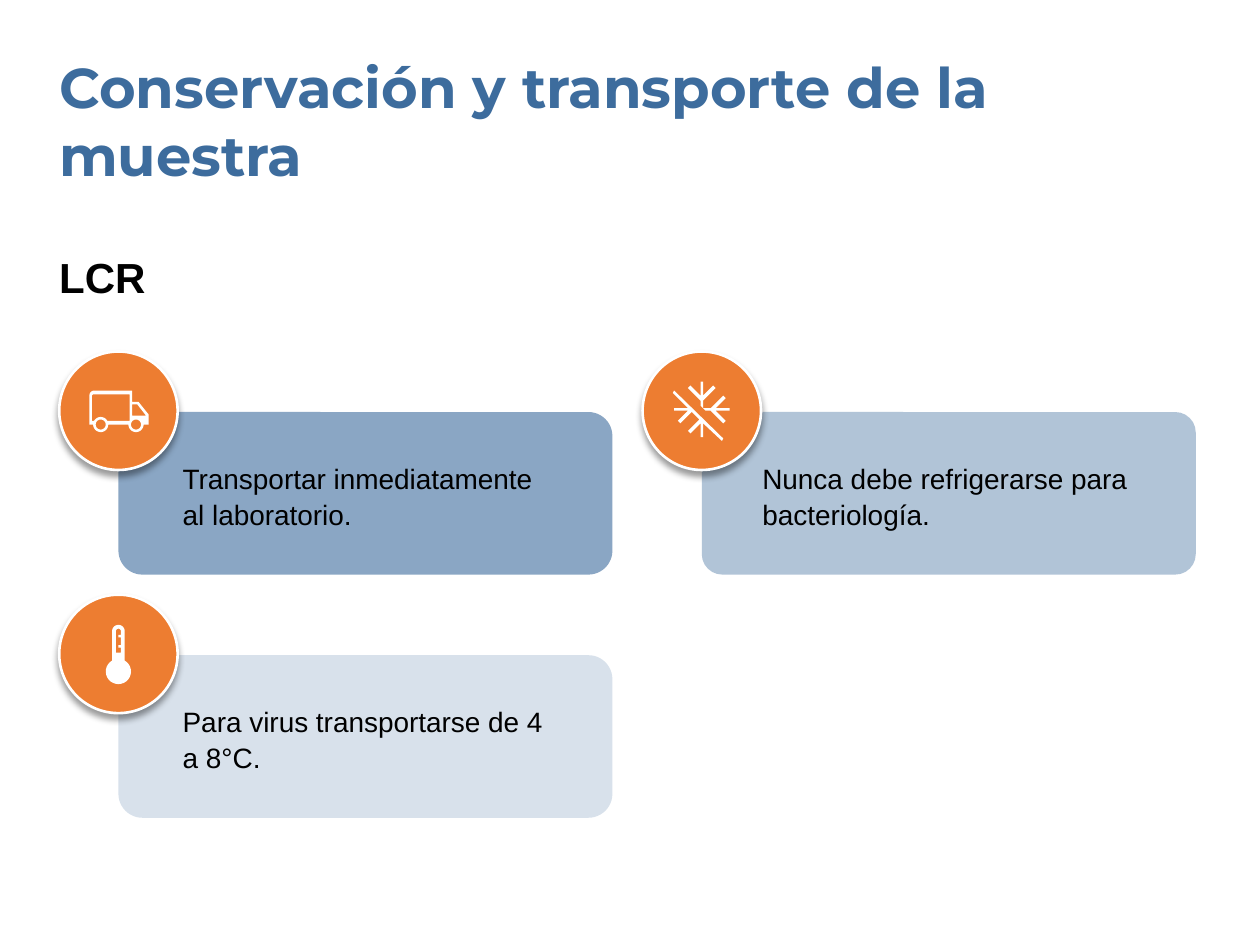
import math
from dataclasses import dataclass

from lxml import etree
from pptx import Presentation
from pptx import util as u
from pptx.dml.color import RGBColor
from pptx.enum import shapes, text
from pptx.oxml import ns


@dataclass(frozen=True)
class Theme:
    blue: str = "3D6C9D"
    orange: str = "ED7D31"
    white: str = "FFFFFF"
    black: str = "000000"
    heading_font: str = "Montserrat"
    body_font: str = "Arial"
    title_size: int = 32
    subtitle_size: int = 24
    body_size: int = 16


def arc(center_x, center_y, radius, start=0, end=360, steps=24):
    """Points along an arc; degrees run clockwise from the right."""
    angles = [math.radians(start + (end - start) * i / steps) for i in range(steps + 1)]
    return [(center_x + radius * math.cos(a), center_y + radius * math.sin(a))
            for a in angles]


def sub_element(parent, tag, **attributes):
    return etree.SubElement(parent, ns.qn(tag), attributes)


# Icon contours are measured in inches from the top left of the badge.
def truck():
    left_wheel, right_wheel = (0.33, 0.58), (0.61, 0.58)
    body = [(0.24, 0.58), *arc(0.28, 0.35, 0.04, 180, 270, 6), (0.58, 0.31),
            (0.58, 0.40), (0.63, 0.40), (0.71, 0.50), (0.71, 0.58),
            *arc(*right_wheel, 0.06, 0, 180), *arc(*left_wheel, 0.06, 0, 180)]
    cargo = [(0.26, 0.55), *arc(*left_wheel, 0.06, 210, 330), (0.56, 0.55),
             (0.56, 0.34), (0.27, 0.34), (0.26, 0.35)]
    window = [(0.58, 0.51), (0.69, 0.51), (0.62, 0.42), (0.58, 0.42)]
    return [body, cargo, window, arc(*left_wheel, 0.04), arc(*right_wheel, 0.04)]


def crossed_snowflake():
    lower = [(0.48, 0.57), (0.48, 0.68), (0.46, 0.68), (0.46, 0.57), (0.38, 0.65),
             (0.36, 0.63), (0.45, 0.54), (0.39, 0.48), (0.30, 0.57), (0.28, 0.55),
             (0.36, 0.47), (0.25, 0.47), (0.25, 0.45), (0.36, 0.45), (0.24, 0.33),
             (0.25, 0.31), (0.64, 0.69), (0.63, 0.71)]
    upper = [(0.54, 0.47), (0.50, 0.47), (0.46, 0.43), (0.46, 0.39), (0.36, 0.29),
             (0.38, 0.27), (0.46, 0.35), (0.46, 0.24), (0.48, 0.24), (0.48, 0.35),
             (0.56, 0.27), (0.58, 0.29), (0.48, 0.39), (0.48, 0.45), (0.54, 0.45),
             (0.64, 0.35), (0.66, 0.37), (0.58, 0.45), (0.69, 0.45), (0.69, 0.47),
             (0.58, 0.47), (0.66, 0.55), (0.64, 0.57)]
    return [lower, upper]


def thermometer():
    middle = 0.47
    outline = arc(middle, 0.29, 0.05, 180, 360) + arc(middle, 0.61, 0.1, 300, 600)
    tube = [(0.45, 0.46), *arc(middle, 0.29, 0.02, 180, 360, 8),
            (0.49, 0.32), (0.47, 0.32), (0.47, 0.34), (0.49, 0.34),
            (0.49, 0.40), (0.47, 0.40), (0.47, 0.42), (0.49, 0.42), (0.49, 0.46)]
    return [outline, tube]


class SlideMaker:
    def __init__(self, page, theme):
        self.page, self.theme = page, theme

    def set_words(self, box, words, font, size, color, bold=False):
        frame = box.text_frame
        frame.word_wrap = True
        frame.auto_size = text.MSO_AUTO_SIZE.NONE
        frame.vertical_anchor = text.MSO_ANCHOR.TOP
        frame.margin_left = frame.margin_right = frame.margin_top = frame.margin_bottom = 0
        frame.text = words
        para = frame.paragraphs[0]
        para.alignment = text.PP_ALIGN.LEFT
        para.font.name, para.font.size, para.font.bold = font, u.Pt(size), bold
        para.font.color.rgb = RGBColor.from_string(color)
        return para

    def title(self, words, left, top, width, height):
        box = self.page.shapes.title
        box.left, box.top = u.Inches(left), u.Inches(top)
        box.width, box.height = u.Inches(width), u.Inches(height)
        para = self.set_words(box, words, self.theme.heading_font,
                              self.theme.title_size, self.theme.blue, True)
        para.line_spacing, para.space_before = 1.0, u.Pt(0)

    def label(self, words, left, top, width, height, size, bold=False):
        box = self.page.shapes.add_textbox(*map(u.Inches, (left, top, width, height)))
        para = self.set_words(box, words, self.theme.body_font, size,
                              self.theme.black, bold)
        para.line_spacing = 1.06

    def paint(self, shape, color):
        shape.shadow.inherit = False
        shape.fill.solid()
        shape.fill.fore_color.rgb = RGBColor.from_string(color)
        shape.line.fill.background()

    def panel(self, left, top, width, height, opacity, rounding):
        panel = self.page.shapes.add_shape(
            shapes.MSO_SHAPE.ROUNDED_RECTANGLE,
            *map(u.Inches, (left, top, width, height)))
        panel.adjustments[0] = rounding
        self.paint(panel, self.theme.blue)
        color = panel._element.spPr.find(".//" + ns.qn("a:srgbClr"))
        sub_element(color, "a:alpha", val=str(opacity * 1000))

    def badge(self, left, top, size):
        badge = self.page.shapes.add_shape(
            shapes.MSO_SHAPE.OVAL, *map(u.Inches, (left, top, size, size)))
        self.paint(badge, self.theme.orange)
        badge.line.color.rgb = RGBColor.from_string(self.theme.white)
        badge.line.width = u.Pt(1.5)
        effects = badge._element.spPr.find(ns.qn("a:effectLst"))
        shadow = sub_element(effects, "a:outerShdw", blurRad=str(u.Pt(4)),
                             dist=str(u.Pt(3)), dir="5400000", rotWithShape="0")
        color = sub_element(shadow, "a:srgbClr", val=self.theme.black)
        sub_element(color, "a:alpha", val="40000")

    def icon(self, contours, left, top):
        """Fill the contours as one outline, inner ones cutting holes."""
        placed = [[(u.Inches(left + x), u.Inches(top + y)) for x, y in contour]
                  for contour in contours]
        builder = self.page.shapes.build_freeform(*placed[0][0])
        for number, (start, *rest) in enumerate(placed):
            if number:
                builder.move_to(*start)
            builder.add_line_segments(rest, close=True)
        self.paint(builder.convert_to_shape(), self.theme.white)

    def card(self, words, left, top, contours, opacity, rounding=0.147,
             text_left=0.98, text_width=2.9):
        self.panel(left + 0.47, top + 0.48, 3.92, 1.29, opacity, rounding)
        self.badge(left, top, 0.94)
        self.label(words, left + text_left, top + 0.86, text_width, 0.54,
                   self.theme.body_size)
        self.icon(contours, left, top)


def main():
    deck = Presentation()
    deck.slide_width, deck.slide_height = u.Inches(10), u.Inches(7.5)
    theme = Theme()
    maker = SlideMaker(deck.slides.add_slide(deck.slide_layouts[5]), theme)
    left, right = 0.47, 5.1
    upper, lower = 2.79, 4.72

    maker.title("Conservación y transporte de la muestra", left, 0.42, 8.55, 1.08)
    maker.label("LCR", left, 1.97, 7.85, 0.4, theme.subtitle_size, bold=True)
    maker.card("Transportar inmediatamente al laboratorio.", left, upper, truck(), 60)
    maker.card("Nunca debe refrigerarse para bacteriología.", right, upper,
               crossed_snowflake(), 40, rounding=0.126, text_left=0.95, text_width=3.15)
    maker.card("Para virus transportarse de 4 a 8°C.", left, lower, thermometer(), 20)
    deck.save("out.pptx")


if __name__ == "__main__":
    main()
